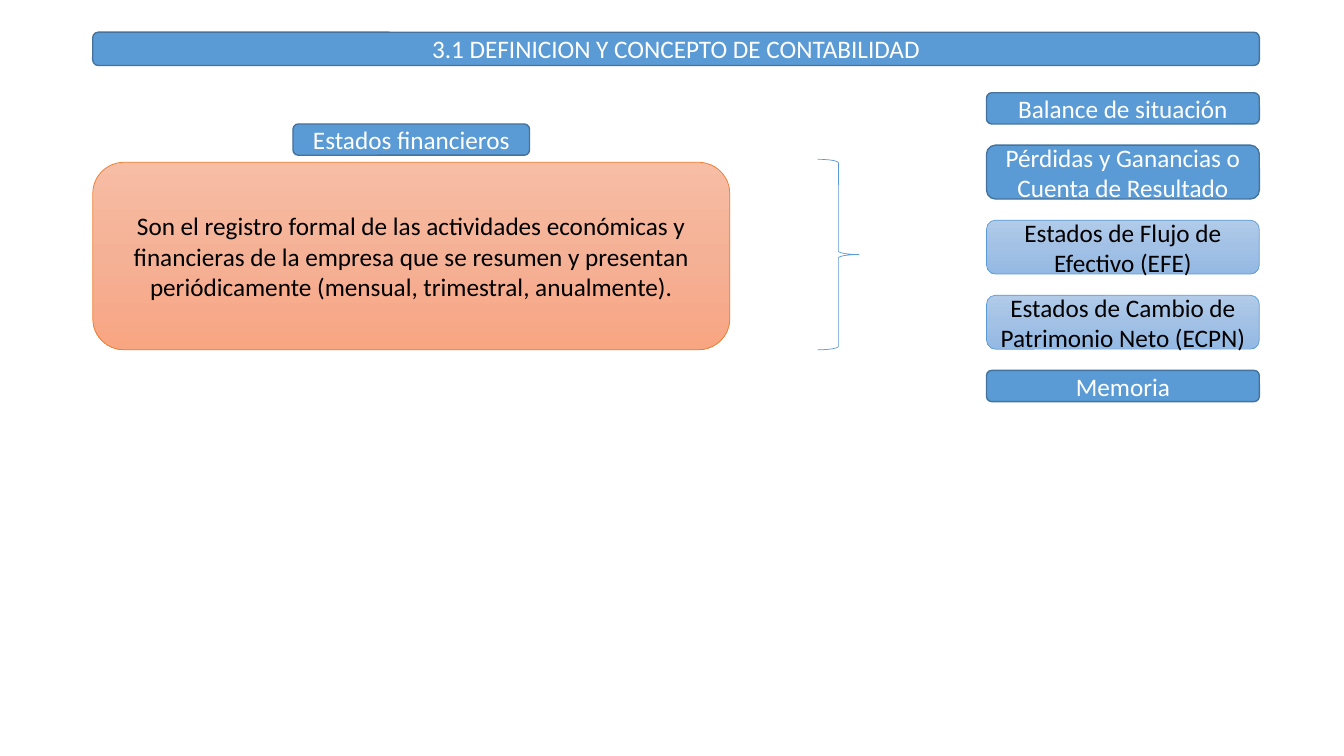
from copy import deepcopy
from dataclasses import dataclass

from pptx import Presentation
from pptx.dml.color import RGBColor
from pptx.enum.shapes import MSO_SHAPE
from pptx.enum.text import MSO_ANCHOR, PP_ALIGN
from pptx.oxml.ns import qn
from pptx.util import Inches, Pt


@dataclass(frozen=True)
class Style:
    fill: tuple[str, ...]  # one colour is solid, three make a gradient
    line: str
    line_width: float
    text: str


@dataclass(frozen=True)
class Area:
    """Position and size as percentages of the slide."""
    left: float
    top: float
    width: float
    height: float


@dataclass(frozen=True)
class Statement:
    text: str
    height: float
    style: Style


SOLID = Style(("5B9BD5",), "43739E", 1, "FFFFFF")
PALE_BLUE = Style(("B1CBE9", "A3C1E5", "93B9E4"), "5B9BD5", 0.5, "000000")
ORANGE = Style(("F7BDA5", "F5B196", "F8A582"), "ED7D31", 0.5, "000000")
BRACE = Style((), "5B9BD5", 0.5, "000000")

MARGIN, CONTENT_WIDTH = 6.9, 86.8
DEFINITION_WIDTH, LABEL_WIDTH, STATEMENT_WIDTH = 47.4, 17.6, 20.3
ONE_LINE, TWO_LINES = 4.13, 7.13
STATEMENTS_TOP, STATEMENT_GAP = 12.27, 2.8

STATEMENTS = [
    Statement("Balance de situación", ONE_LINE, SOLID),
    Statement("Pérdidas y Ganancias o Cuenta de Resultado", TWO_LINES, SOLID),
    Statement("Estados de Flujo de Efectivo (EFE)", TWO_LINES, PALE_BLUE),
    Statement("Estados de Cambio de Patrimonio Neto (ECPN)", TWO_LINES, PALE_BLUE),
    Statement("Memoria", ONE_LINE, SOLID),
]

presentation = Presentation()
presentation.slide_width, presentation.slide_height = Inches(13.33), Inches(7.5)
slide = presentation.slides.add_slide(presentation.slide_layouts[6])


def color(value: str) -> RGBColor:
    return RGBColor.from_string(value)


def apply_fill(shape, colors: tuple[str, ...]) -> None:
    if not colors:
        shape.fill.background()
    elif len(colors) == 1:
        shape.fill.solid()
        shape.fill.fore_color.rgb = color(colors[0])
    else:
        shape.fill.gradient()
        shape.fill.gradient_angle = 270  # top to bottom
        # Add the middle stop to the two default ones
        stops = shape.element.spPr.find(qn("a:gradFill")).find(qn("a:gsLst"))
        stops.insert(1, deepcopy(stops[0]))
        for index, (stop, value) in enumerate(zip(shape.fill.gradient_stops, colors)):
            stop.color.rgb = color(value)
            stop.position = index / (len(colors) - 1)


def add_shape(kind: MSO_SHAPE, area: Area, style: Style):
    width, height = presentation.slide_width, presentation.slide_height
    shape = slide.shapes.add_shape(
        kind,
        int(width * area.left / 100), int(height * area.top / 100),
        int(width * area.width / 100), int(height * area.height / 100),
    )
    shape.shadow.inherit = False
    apply_fill(shape, style.fill)
    shape.line.color.rgb = color(style.line)
    shape.line.width = Pt(style.line_width)
    return shape


def add_box(area: Area, style: Style, *lines: str) -> None:
    frame = add_shape(MSO_SHAPE.ROUNDED_RECTANGLE, area, style).text_frame
    frame.word_wrap = True
    frame.vertical_anchor = MSO_ANCHOR.MIDDLE
    for index, line in enumerate(lines):
        paragraph = frame.add_paragraph() if index else frame.paragraphs[0]
        paragraph.alignment = PP_ALIGN.CENTER
        run = paragraph.add_run()
        run.text = line
        run.font.name = "Calibri"
        run.font.size = Pt(18)
        run.font.color.rgb = color(style.text)


# Title bar
add_box(Area(MARGIN, 4.27, CONTENT_WIDTH, 4.4), SOLID,
        "3.1 DEFINICION Y CONCEPTO DE CONTABILIDAD")

# Definition with its label centred above
add_box(Area(MARGIN, 21.47, DEFINITION_WIDTH, 24.8), ORANGE,
        "Son el registro formal de las actividades económicas y",
        "financieras de la empresa que se resumen y presentan "
        "periódicamente (mensual, trimestral, anualmente).")
label_left = MARGIN + (DEFINITION_WIDTH - LABEL_WIDTH) / 2
add_box(Area(label_left, 16.4, LABEL_WIDTH, ONE_LINE), SOLID, "Estados financieros")

# Brace
add_shape(MSO_SHAPE.RIGHT_BRACE, Area(60.84, 21.07, 3.08, 25.2), BRACE)

# Financial statements, stacked against the right margin
statement_left = MARGIN + CONTENT_WIDTH - STATEMENT_WIDTH
statement_top = STATEMENTS_TOP
for statement in STATEMENTS:
    add_box(Area(statement_left, statement_top, STATEMENT_WIDTH, statement.height),
            statement.style, statement.text)
    statement_top += statement.height + STATEMENT_GAP

presentation.save("out.pptx")
